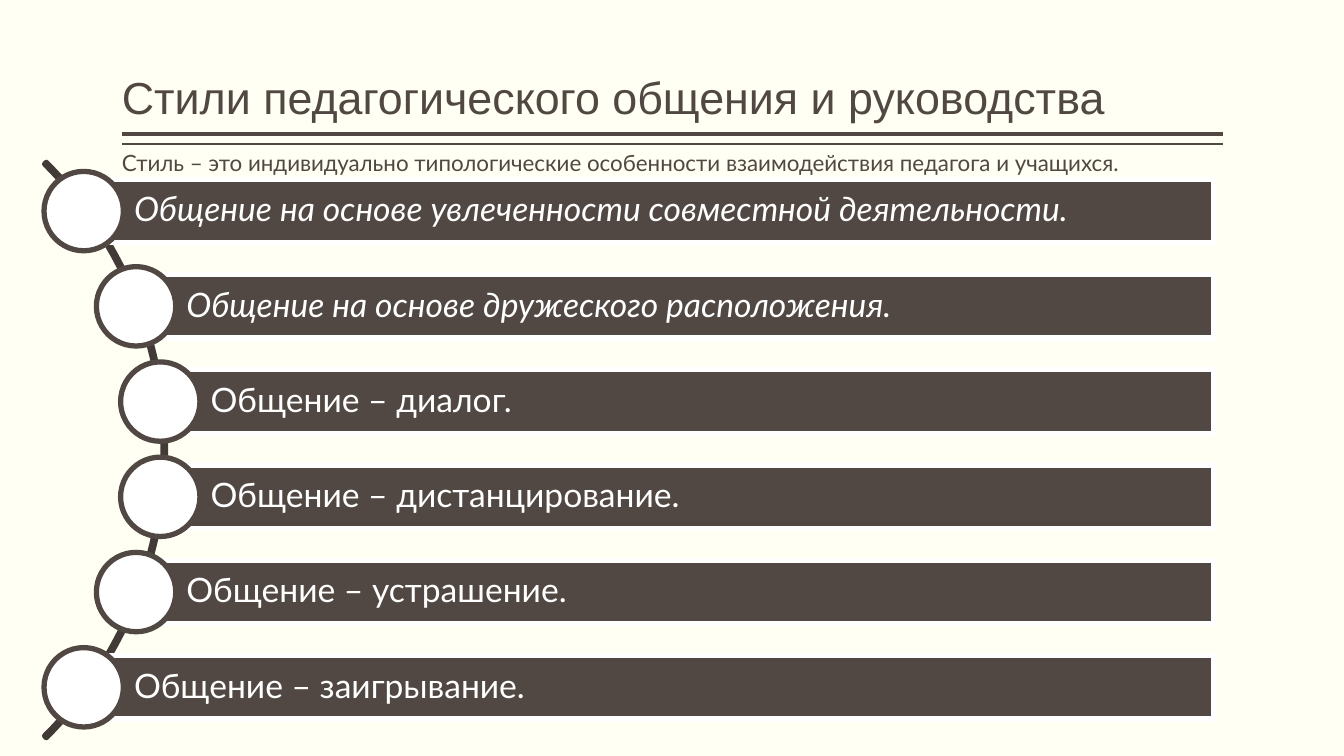
from pptx import Presentation
from pptx.dml.color import RGBColor
from pptx.enum.shapes import MSO_CONNECTOR, MSO_SHAPE
from pptx.enum.text import MSO_ANCHOR, MSO_AUTO_SIZE, PP_ALIGN
from pptx.oxml.ns import qn
from pptx.util import Cm, Pt
from lxml.etree import SubElement
from dataclasses import dataclass

TITLE = "Стили педагогического общения и руководства"
DEFINITION = "Стиль – это индивидуально типологические особенности взаимодействия педагога и учащихся."
STYLES = [
    ("Общение на основе увлеченности совместной деятельности.", True),
    ("Общение на основе дружеского расположения.", True),
    ("Общение – диалог.", False),
    ("Общение – дистанцирование.", False),
    ("Общение – устрашение.", False),
    ("Общение – заигрывание.", False),
]
BAR_LEFTS = [2.11, 3.43, 4.04]
BAR_TOP, BAR_PITCH, BAR_H, BAR_RIGHT = 4.52, 2.4, 1.6, 30.58
DOT = 2.0
ARC = (-16.33, 1.09, 20.5, 20.5)
ARC_ADJ = (189, 27, 0.003)
LEFT, WIDTH = 3.07, 27.74
TITLE_BOX = (LEFT, 0.2, WIDTH, 3.05)
BODY_BOX = (LEFT, 3.71, WIDTH, 0.89)
RULES = [(3.38, 3), (3.63, 1)]
PAD = (0, 0.13, 0, 0.13)
BAR_PAD = (1.27, 0.18, 0.18, 0.18)


@dataclass(frozen=True)
class Theme:
    paper: RGBColor = RGBColor(0xFF, 0xFF, 0xF3)
    brown: RGBColor = RGBColor(0x51, 0x48, 0x43)
    dark: RGBColor = RGBColor(0x41, 0x3A, 0x36)
    white: RGBColor = RGBColor(0xFF, 0xFF, 0xFF)
    head: str = "Arial"
    text: str = "Lato"
    title_size: Pt = Pt(32)
    body_size: Pt = Pt(16)
    bar_size: Pt = Pt(24)
    outline: Pt = Pt(3.78)


T = Theme()


def set_attrs(obj, values):
    for name, value in values.items():
        setattr(obj, name, value)


def write(sp, text, pad, anchor, color, **font):
    tf = sp.text_frame
    margins = ("margin_left", "margin_top", "margin_right", "margin_bottom")
    set_attrs(tf, dict(zip(margins, map(Cm, pad))))
    set_attrs(tf, {"word_wrap": True, "auto_size": MSO_AUTO_SIZE.NONE, "vertical_anchor": anchor})
    p = tf.paragraphs[0]
    set_attrs(p, {"alignment": PP_ALIGN.LEFT, "line_spacing": 0.9})
    r = p.add_run()
    r.text = text
    set_attrs(r.font, font)
    r.font.color.rgb = color
    return p


def place(sp, box):
    set_attrs(sp, dict(zip(("left", "top", "width", "height"), map(Cm, box))))


def add_shape(s, kind, box, fill, line):
    sp = s.shapes.add_shape(kind, *map(Cm, box))
    sp.shadow.inherit = False
    if fill is None:
        sp.fill.background()
    else:
        sp.fill.solid()
        sp.fill.fore_color.rgb = fill
    sp.line.color.rgb = line
    sp.line.width = T.outline
    return sp


def add_rule(s, y, width):
    ln = s.shapes.add_connector(MSO_CONNECTOR.STRAIGHT, Cm(LEFT + WIDTH), Cm(y), Cm(LEFT), Cm(y))
    ln.line.color.rgb = T.brown
    ln.line.width = Pt(width)
    SubElement(ln._element.spPr, qn("a:effectLst"))


def add_header(s):
    title, body = s.shapes.title, s.placeholders[1]
    place(title, TITLE_BOX)
    write(title, TITLE, PAD, MSO_ANCHOR.BOTTOM, T.brown, name=T.head, size=T.title_size)
    place(body, BODY_BOX)
    p = write(body, DEFINITION, PAD, MSO_ANCHOR.TOP, T.brown, name=T.text, size=T.body_size)
    p.space_before = Pt(12)
    pPr = p._p.get_or_add_pPr()
    pPr.set("marL", "0")
    pPr.set("indent", "0")
    SubElement(pPr, qn("a:buNone"))
    for y, width in RULES:
        add_rule(s, y, width)


def add_styles(s):
    arc = add_shape(s, MSO_SHAPE.BLOCK_ARC, ARC, None, T.dark)
    for i, value in enumerate(ARC_ADJ):
        arc.adjustments[i] = value
    lefts = BAR_LEFTS + BAR_LEFTS[::-1]
    for i, ((text, italic), x) in enumerate(zip(STYLES, lefts)):
        y = BAR_TOP + i * BAR_PITCH
        bar = add_shape(s, MSO_SHAPE.RECTANGLE, (x, y, BAR_RIGHT - x, BAR_H), T.brown, T.white)
        write(bar, text, BAR_PAD, MSO_ANCHOR.MIDDLE, T.white,
              name=T.text, size=T.bar_size, italic=italic)
        dot = (x - DOT / 2, y + (BAR_H - DOT) / 2, DOT, DOT)
        add_shape(s, MSO_SHAPE.OVAL, dot, T.white, T.brown)


def main():
    """Build the slide on styles of pedagogical communication."""
    prs = Presentation()
    set_attrs(prs, {"slide_width": Cm(33.87), "slide_height": Cm(19.05)})
    s = prs.slides.add_slide(prs.slide_layouts[1])
    s.background.fill.solid()
    s.background.fill.fore_color.rgb = T.paper
    add_header(s)
    add_styles(s)
    prs.save("out.pptx")


if __name__ == "__main__":
    main()
